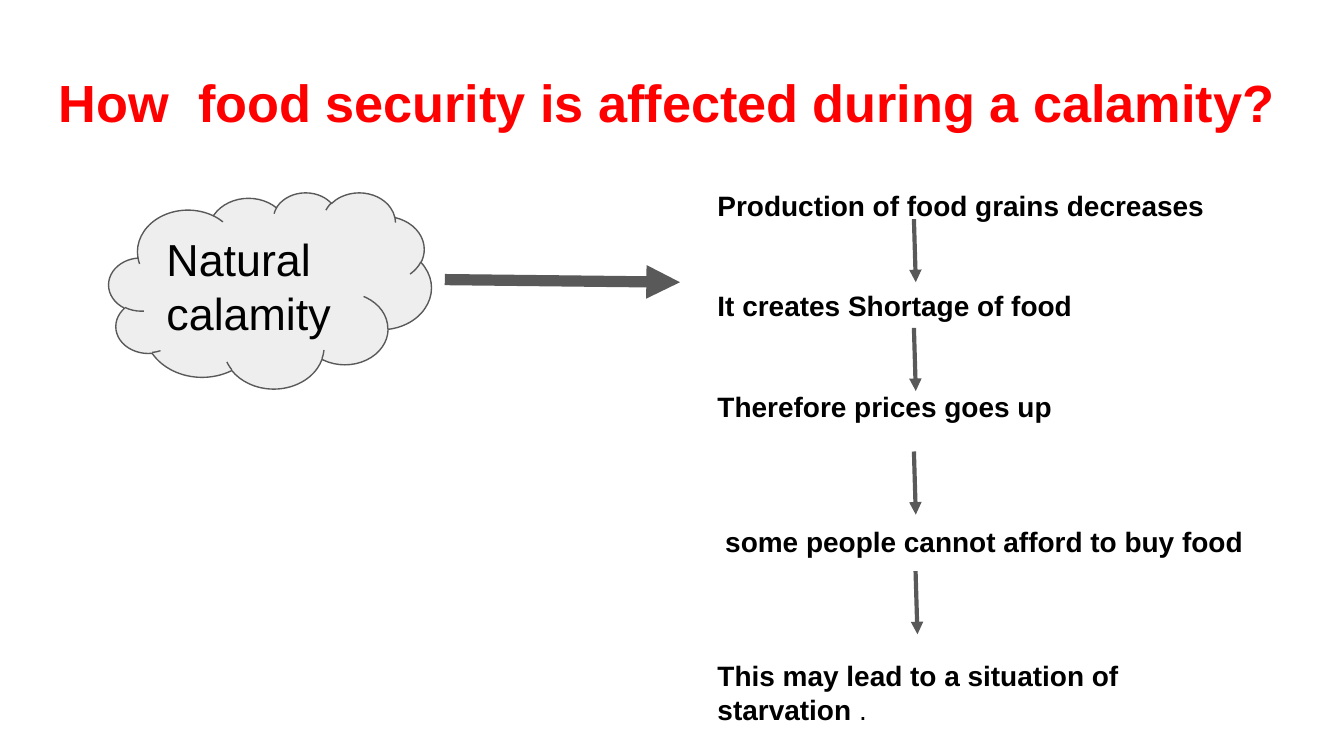
from dataclasses import dataclass

from pptx import Presentation
from pptx.dml.color import RGBColor
from pptx.enum.shapes import MSO_CONNECTOR, MSO_SHAPE
from pptx.enum.text import MSO_ANCHOR, PP_ALIGN
from pptx.oxml.ns import qn
from pptx.util import Pt
from lxml import etree

CLOUD = MSO_SHAPE.CLOUD
STRAIGHT = MSO_CONNECTOR.STRAIGHT
MIDDLE = MSO_ANCHOR.MIDDLE
LEFT = PP_ALIGN.LEFT

FONT = "Arial"
INSET = 7.2
PITCH = 18  # line height of the effects list
COLORS = {"title": "FF0000", "text": "000000", "cloud": "EEEEEE", "line": "595959"}


@dataclass
class Box:
    left: float
    top: float
    width: float
    height: float


@dataclass
class Arrow:
    x: float
    y: float
    dx: float
    dy: float
    weight: float = 2.25


@dataclass
class Effect:
    text: str
    gap: int  # free lines above


EFFECTS = [
    Effect("Production of food grains decreases", 0),
    Effect("It creates Shortage of food", 2),
    Effect("Therefore prices goes up", 2),
    Effect(" some people cannot afford to buy food", 3),
    Effect("This may lead to a situation of starvation ", 3),
]
ARROWS = [
    Arrow(238.3, 149.8, 126, 1.4, 6),
    Arrow(489.6, 117.4, 1, 33.8),
    Arrow(489.6, 175.7, 1, 33.8),
    Arrow(489.6, 241.9, 1, 33.8),
    Arrow(490.5, 306, 1, 33.8),
]


def color(name: str) -> RGBColor:
    return RGBColor.from_string(COLORS[name])


def place(box: Box) -> tuple:
    return Pt(box.left), Pt(box.top), Pt(box.width), Pt(box.height)


def set_frame(frame) -> None:
    frame.word_wrap = True
    frame.margin_left = frame.margin_right = Pt(INSET)
    frame.margin_top = frame.margin_bottom = Pt(INSET)


def style(para, size: float, name: str, bold: bool) -> None:
    para.alignment = LEFT
    for run in para.runs:
        run.font.name = FONT
        run.font.size = Pt(size)
        run.font.bold = bold
        run.font.color.rgb = color(name)


def add_title(slide, box: Box, text: str) -> None:
    frame = slide.shapes.add_textbox(*place(box)).text_frame
    set_frame(frame)
    frame.text = text
    frame.paragraphs[0].line_spacing = 1.15
    style(frame.paragraphs[0], 28, "title", True)


def add_cloud(slide, box: Box, text: str) -> None:
    cloud = slide.shapes.add_shape(CLOUD, *place(box))
    cloud.shadow.inherit = False
    cloud.fill.solid()
    cloud.fill.fore_color.rgb = color("cloud")
    cloud.line.color.rgb = color("line")
    cloud.line.width = Pt(0.75)
    frame = cloud.text_frame
    set_frame(frame)
    frame.vertical_anchor = MIDDLE
    frame.text = text
    style(frame.paragraphs[0], 24, "text", False)


def add_effects(slide, box: Box, effects: list[Effect]) -> None:
    frame = slide.shapes.add_textbox(*place(box)).text_frame
    set_frame(frame)
    frame.text = "\n".join(effect.text for effect in effects)
    for para, effect in zip(frame.paragraphs, effects):
        para.line_spacing = Pt(PITCH)
        if effect.gap:
            para.space_before = Pt(effect.gap * PITCH)
        style(para, 15, "text", True)
    last = frame.paragraphs[-1]
    last.add_run().text = "."
    style(last, 15, "text", True)
    last.runs[-1].font.bold = False


def add_arrow(slide, arrow: Arrow) -> None:
    line = slide.shapes.add_connector(
        STRAIGHT, Pt(arrow.x), Pt(arrow.y),
        Pt(arrow.x + arrow.dx), Pt(arrow.y + arrow.dy))
    line.line.color.rgb = color("line")
    line.line.width = Pt(arrow.weight)
    props = line.line._get_or_add_ln()
    etree.SubElement(props, qn("a:tailEnd"), type="triangle")
    etree.SubElement(line._element.spPr, qn("a:effectLst"))


def main() -> None:
    deck = Presentation()
    deck.slide_width, deck.slide_height = Pt(720), Pt(405)
    slide = deck.slides.add_slide(deck.slide_layouts[6])
    add_title(slide, Box(24.5, 25.2, 671, 373.7),
              "How  food security is affected during a calamity?")
    add_cloud(slide, Box(58.3, 103, 172.8, 105.1), "Natural calamity")
    add_effects(slide, Box(377.3, 93.6, 302.4, 305.3), EFFECTS)
    for arrow in ARROWS:
        add_arrow(slide, arrow)
    deck.save("out.pptx")


if __name__ == "__main__":
    main()
